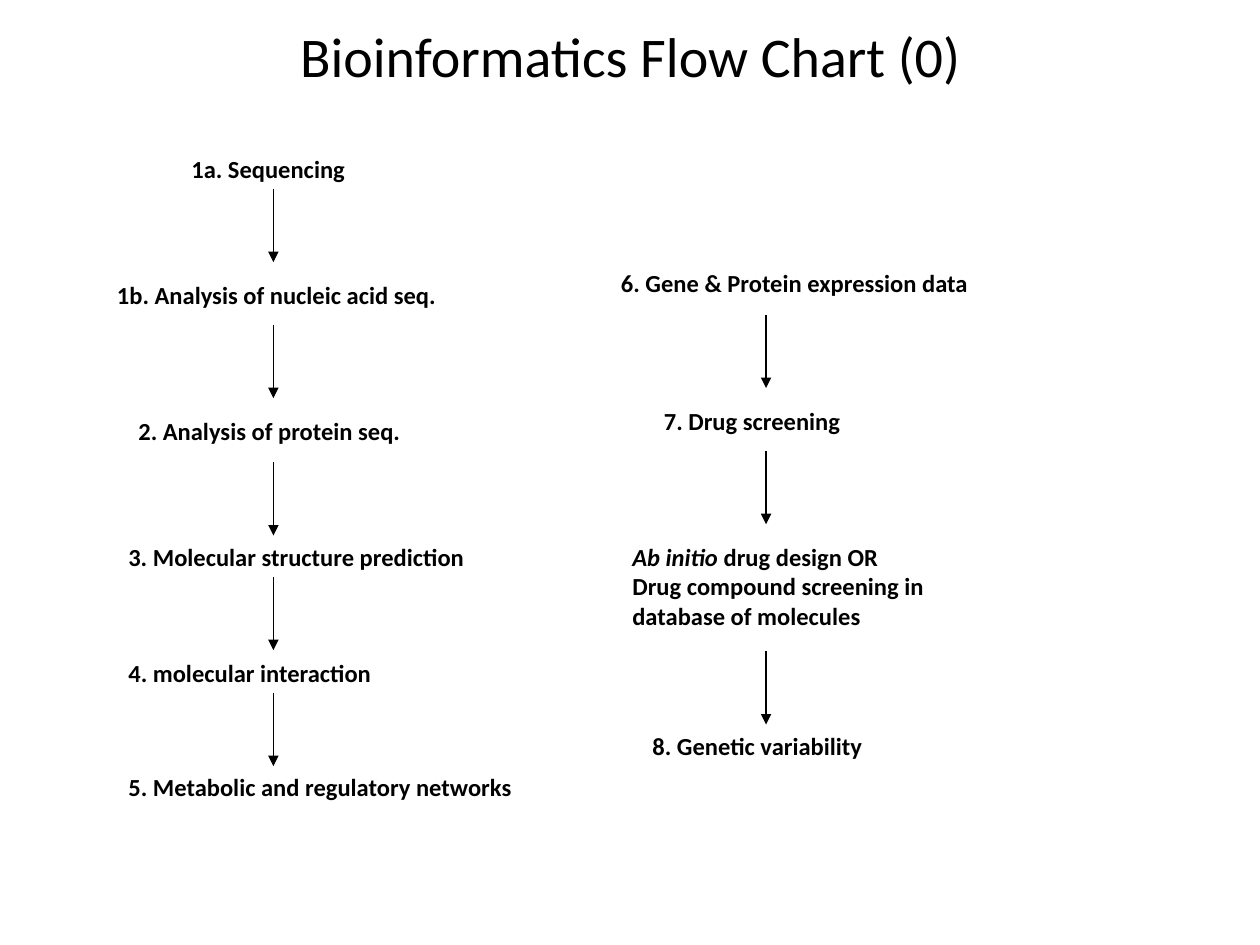
from pptx import Presentation
from pptx.dml.color import RGBColor
from pptx.enum.shapes import MSO_CONNECTOR
from pptx.enum.text import MSO_ANCHOR, MSO_AUTO_SIZE, PP_ALIGN
from pptx.oxml.ns import qn
from pptx.util import Inches, Pt
from lxml import etree

STRAIGHT = MSO_CONNECTOR.STRAIGHT
MIDDLE = MSO_ANCHOR.MIDDLE
FIT_SHAPE, FIXED = MSO_AUTO_SIZE.SHAPE_TO_FIT_TEXT, MSO_AUTO_SIZE.NONE
CENTER, LEFT = PP_ALIGN.CENTER, PP_ALIGN.LEFT

THEME = {"font": "Calibri", "ink": RGBColor(0, 0, 0),
         "title_size": Pt(32), "step_size": Pt(14), "line_width": Pt(0.75)}

TITLE = "Bioinformatics Flow Chart (0)"
ITALIC_PHRASE = "Ab initio"

# Step: text lines, left, top, width, wraps, top of the arrow that follows
COLUMNS = [
    {"arrow_x": 2.17, "steps": [
        (["1a. Sequencing"], 1.42, 1.17, 1.62, False, 1.5),
        (["1b. Analysis of nucleic acid seq."], 0.83, 2.17, 3.49, True, 2.58),
        (["2. Analysis of protein seq."], 1, 3.25, 2.6, False, 3.67),
        (["3. Molecular structure prediction"], 0.92, 4.25, 3.2, False, 4.58),
        (["4. molecular interaction"], 0.92, 5.17, 2.38, False, 5.5),
        (["5. Metabolic and regulatory networks"], 0.92, 6.08, 3.61, False, None),
    ]},
    {"arrow_x": 6.08, "steps": [
        (["6. Gene & Protein expression data"], 4.83, 2.08, 3.35, False, 2.5),
        (["7. Drug screening"], 5.17, 3.17, 1.75, True, 3.58),
        (["Ab initio drug design OR", "Drug compound screening in",
          "database of molecules"], 4.92, 4.25, 2.95, False, 5.17),
        (["8. Genetic variability"], 5.08, 5.75, 2.09, False, None),
    ]},
]
ARROW_LENGTH = 0.58
LINE_HEIGHT, BOX_PADDING = 0.235, 0.1


def style_run(run, size, bold):
    run.font.name = THEME["font"]
    run.font.size = size
    run.font.bold = bold
    run.font.color.rgb = THEME["ink"]


def add_title(slide):
    title = slide.shapes.title
    title.left, title.top = Inches(1.84), Inches(0.12)
    title.width, title.height = Inches(6.33), Inches(0.63)
    frame = title.text_frame
    frame.text = TITLE
    frame.auto_size = FIXED
    frame.vertical_anchor = MIDDLE
    heading = frame.paragraphs[0]
    heading.alignment = CENTER
    style_run(heading.runs[0], THEME["title_size"], False)


def add_step(slide, lines, left, top, width, wraps):
    height = LINE_HEIGHT * len(lines) + BOX_PADDING
    box = slide.shapes.add_textbox(Inches(left), Inches(top), Inches(width), Inches(height))
    frame = box.text_frame
    frame.word_wrap = wraps
    frame.auto_size = FIT_SHAPE
    frame.text = "\n".join(lines)
    for paragraph in frame.paragraphs:
        paragraph.alignment = LEFT
        if paragraph.text.startswith(ITALIC_PHRASE):
            rest = paragraph.text[len(ITALIC_PHRASE):]
            paragraph.text = ITALIC_PHRASE
            paragraph.runs[0].font.italic = True
            paragraph.add_run().text = rest
        for run in paragraph.runs:
            style_run(run, THEME["step_size"], True)


def add_down_arrow(slide, x, top):
    arrow = slide.shapes.add_connector(
        STRAIGHT, Inches(x), Inches(top), Inches(x), Inches(top + ARROW_LENGTH))
    arrow.line.color.rgb = THEME["ink"]
    arrow.line.width = THEME["line_width"]
    etree.SubElement(arrow.line._get_or_add_ln(), qn("a:tailEnd"), type="triangle")
    etree.SubElement(arrow._element.spPr, qn("a:effectLst"))


def main():
    deck = Presentation()
    deck.slide_width, deck.slide_height = Inches(10), Inches(7.5)
    slide = deck.slides.add_slide(deck.slide_layouts[5])
    add_title(slide)
    for column in COLUMNS:
        for *step, arrow_top in column["steps"]:
            add_step(slide, *step)
            if arrow_top is not None:
                add_down_arrow(slide, column["arrow_x"], arrow_top)
    deck.save("out.pptx")


if __name__ == "__main__":
    main()
